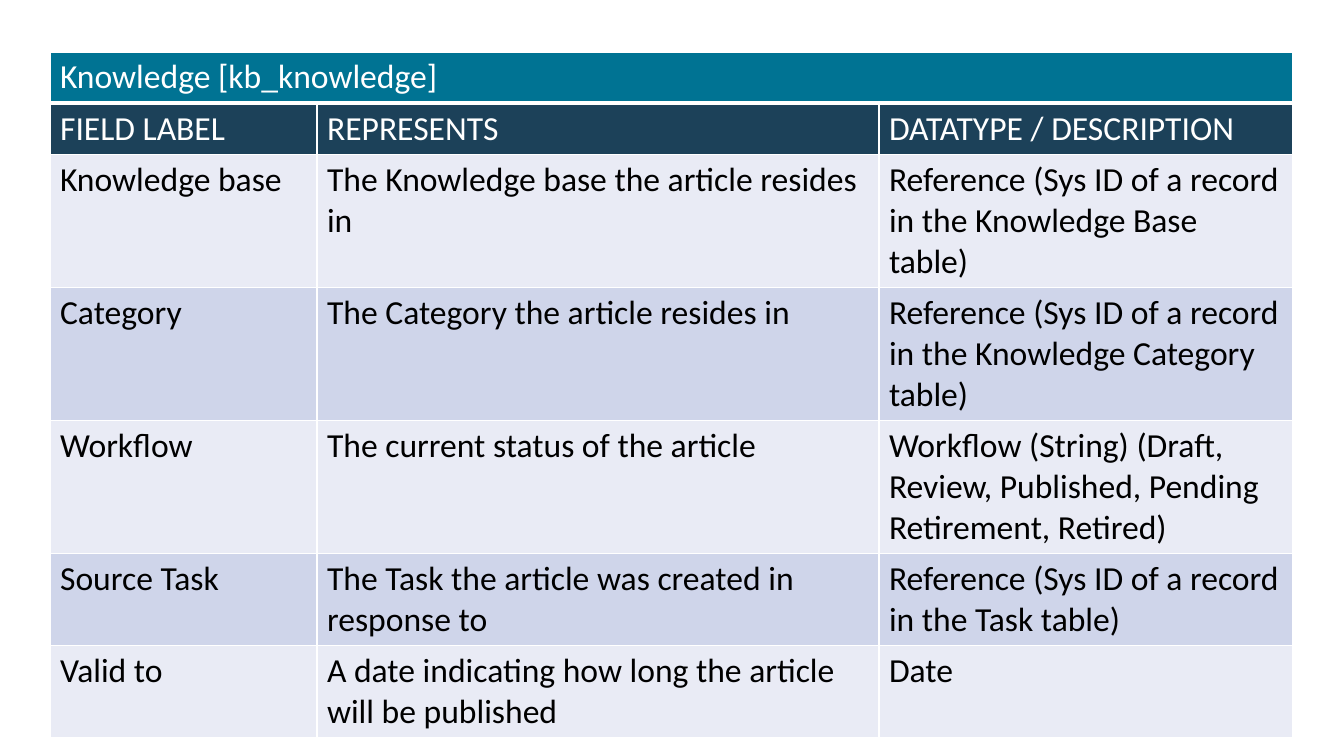
from lxml import etree
from pptx import Presentation
from pptx import util as u
from pptx.dml.color import RGBColor
from pptx.oxml.ns import qn

PX = 914400 / 100.8
COLORS = {
    "title": "007393",
    "header": "1C4159",
    "light": "E9EBF5",
    "dark": "CFD5EA",
    "white": "FFFFFF",
    "black": "000000",
}
COLUMN_WIDTHS = [267, 562, 414]
ROW_HEIGHT = 46
ROWS = [
    ["Knowledge [kb_knowledge]", "", ""],
    ["FIELD LABEL", "REPRESENTS", "DATATYPE / DESCRIPTION"],
    ["Knowledge base", "The Knowledge base the article resides in",
     "Reference (Sys ID of a record in the Knowledge Base table)"],
    ["Category", "The Category the article resides in",
     "Reference (Sys ID of a record in the Knowledge Category table)"],
    ["Workflow", "The current status of the article",
     "Workflow (String) (Draft, Review, Published, Pending Retirement, Retired)"],
    ["Source Task", "The Task the article was created in response to",
     "Reference (Sys ID of a record in the Task table)"],
    ["Valid to", "A date indicating how long the article will be published", "Date"],
]


def px(value):
    return u.Emu(round(value * PX))


def add_border(cell, side, points):
    line = etree.SubElement(cell._tc.get_or_add_tcPr(), qn(f"a:ln{side}"), w=str(u.Pt(points)))
    fill = etree.SubElement(line, qn("a:solidFill"))
    etree.SubElement(fill, qn("a:srgbClr"), val=COLORS["white"])


presentation = Presentation()
presentation.slide_width, presentation.slide_height = px(1344), px(756)
slide = presentation.slides.add_slide(presentation.slide_layouts[6])

# Table frame; rows grow to fit their text
frame = slide.shapes.add_table(len(ROWS), len(COLUMN_WIDTHS), px(50), px(52),
                               px(sum(COLUMN_WIDTHS)), px(675))
table = frame.table
for column, width in zip(table.columns, COLUMN_WIDTHS):
    column.width = px(width)
for row in table.rows:
    row.height = px(ROW_HEIGHT)
frame.height = px(675)
table.cell(0, 0).merge(table.cell(0, 2))

# Cells: title row, header row, then alternating bands
for row_index, labels in enumerate(ROWS):
    band = ["title", "header"][row_index] if row_index < 2 else ["light", "dark"][row_index % 2]
    font_format = {"name": "Calibri", "size": u.Pt(24), "bold": False}
    text_color = COLORS["white" if row_index < 2 else "black"]
    borders = {"L": 1, "R": 1, "T": 3 if row_index == 1 else 1, "B": 3 if row_index == 0 else 1}
    for column_index, label in enumerate(labels):
        cell = table.cell(row_index, column_index)
        for side, points in borders.items():
            add_border(cell, side, points)
        cell.fill.solid()
        cell.fill.fore_color.rgb = RGBColor.from_string(COLORS[band])
        if label:
            run = cell.text_frame.paragraphs[0].add_run()
            run.text = label
            for name, value in font_format.items():
                setattr(run.font, name, value)
            run.font.color.rgb = RGBColor.from_string(text_color)

presentation.save("out.pptx")
